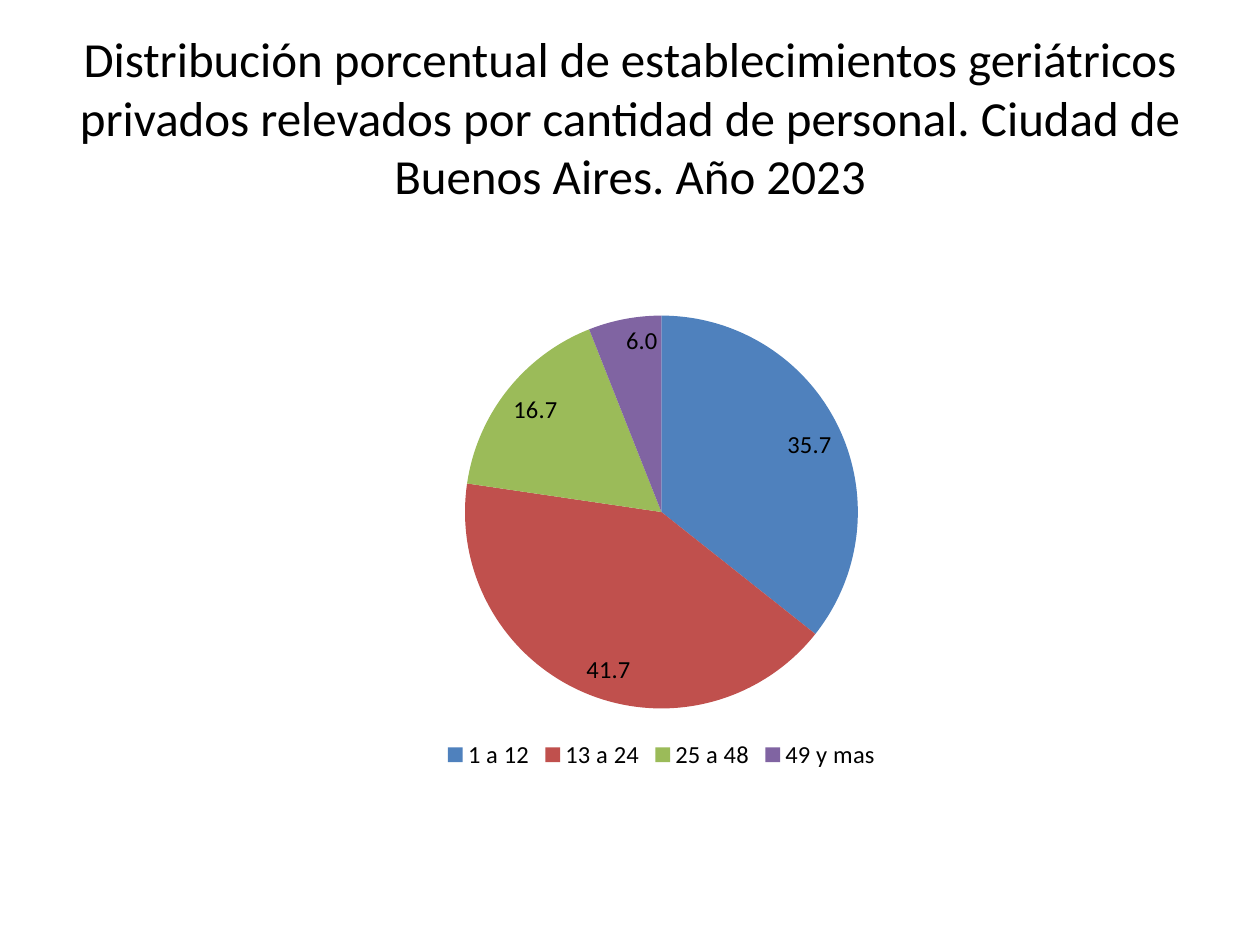
"""Builds a slide with a pie chart of care homes by number of staff."""
import pptx
import pptx.chart.data
import pptx.dml.color
import pptx.enum.chart
import pptx.enum.text
import pptx.oxml
import pptx.oxml.ns
import pptx.util


def colour(value):
    """Turn a hex string into a colour."""
    return pptx.dml.color.RGBColor.from_string(value)


class StaffSlide:
    """Holds the style and the current slide."""

    FONT = "Calibri"
    INK = "000000"
    SLICES = ("4F81BD", "C0504D", "9BBB59", "8064A2")

    def __init__(self, deck):
        """Add a title-only slide to the deck."""
        self.width, self.height = deck.slide_width, deck.slide_height
        self.slide = deck.slides.add_slide(deck.slide_layouts[5])

    def box(self, left, top, width, height):
        """Turn shares of the slide's size into lengths."""
        return (int(left * self.width), int(top * self.height),
                int(width * self.width), int(height * self.height))

    def style(self, font, size):
        """Apply the common typeface and ink."""
        font.name = self.FONT
        font.size = pptx.util.Pt(size)
        font.color.rgb = colour(self.INK)

    def title(self, wording, *shares):
        """Fill and place the title placeholder."""
        heading = self.slide.shapes.title
        heading.left, heading.top, heading.width, heading.height = self.box(*shares)
        heading.text_frame.text = wording
        heading.text_frame.vertical_anchor = pptx.enum.text.MSO_ANCHOR.MIDDLE
        paragraph = heading.text_frame.paragraphs[0]
        paragraph.alignment = pptx.enum.text.PP_ALIGN.CENTER
        self.style(paragraph.font, 28)

    def pie(self, shares_by_staff, *shares):
        """Add a pie chart with values on the slices and a legend below."""
        figures = pptx.chart.data.CategoryChartData(number_format="0.0")
        figures.categories = list(shares_by_staff)
        figures.add_series("Series 1", list(shares_by_staff.values()))
        chart = self.slide.shapes.add_chart(
            pptx.enum.chart.XL_CHART_TYPE.PIE, *self.box(*shares), figures).chart
        self.style(chart.font, 14)
        chart.has_title = False
        chart.has_legend = True
        chart.legend.position = pptx.enum.chart.XL_LEGEND_POSITION.BOTTOM
        chart.legend.include_in_layout = False

        plot = chart.plots[0]
        plot.vary_by_categories = True
        plot.has_data_labels = True
        labels = plot.data_labels
        labels.show_value = True
        labels.show_percentage = False
        labels.number_format = "0.0"
        labels.number_format_is_linked = False
        labels.position = pptx.enum.chart.XL_LABEL_POSITION.INSIDE_END
        for index, shade in enumerate(self.SLICES):
            fill = plot.series[0].points[index].format.fill
            fill.solid()
            fill.fore_color.rgb = colour(shade)
        self.place_plot(chart, x=0.26, y=0.1, w=0.48, h=0.77)

    def place_plot(self, chart, **shares):
        """Fix the plot area as shares of the chart's size."""
        settings = [("layoutTarget", "inner"), ("xMode", "edge"), ("yMode", "edge"),
                    *shares.items()]
        marks = "".join(f'<c:{tag} val="{value}"/>' for tag, value in settings)
        namespace = pptx.oxml.ns.nsdecls("c")
        layout = pptx.oxml.parse_xml(
            f"<c:layout {namespace}><c:manualLayout>{marks}</c:manualLayout></c:layout>")
        area = chart.element.find(".//" + pptx.oxml.ns.qn("c:plotArea"))
        for former in area.findall(pptx.oxml.ns.qn("c:layout")):
            area.remove(former)
        area.insert(0, layout)


def main():
    """Build and save the deck."""
    deck = pptx.Presentation()
    deck.slide_width, deck.slide_height = pptx.util.Inches(10), pptx.util.Inches(7.5)
    staff = StaffSlide(deck)
    staff.title(
        "Distribución porcentual de establecimientos geriátricos privados relevados "
        "por cantidad de personal. Ciudad de Buenos Aires. Año 2023",
        0.05, 0.04, 0.9, 1 / 6)
    staff.pie({"1 a 12": 35.7, "13 a 24": 41.7, "25 a 48": 16.7, "49 y mas": 6},
              0.2, 0.28, 0.65, 0.54)
    deck.save("out.pptx")


if __name__ == "__main__":
    main()
